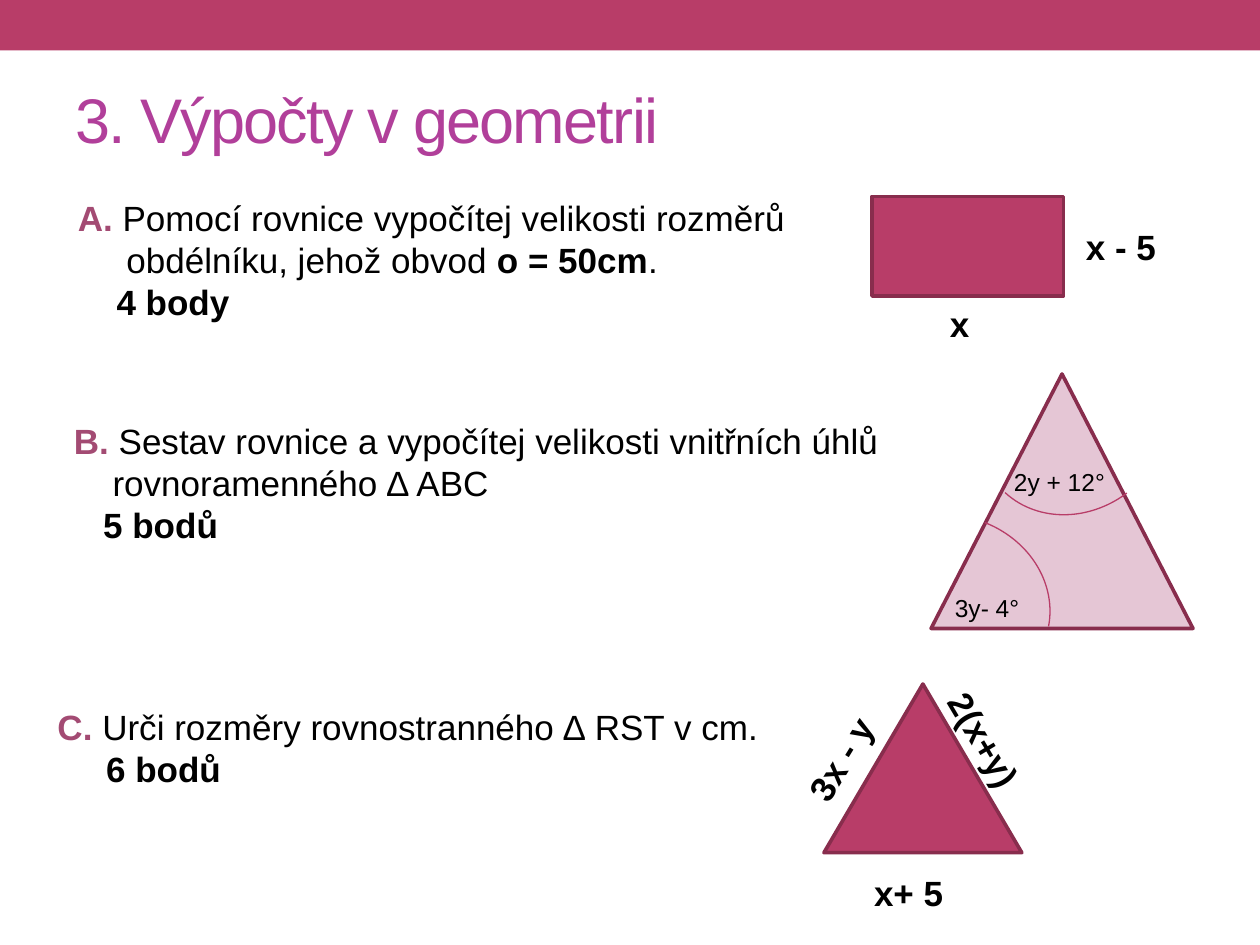
from pptx import Presentation
from pptx.dml.color import RGBColor
from pptx.enum.shapes import MSO_SHAPE
from pptx.enum.text import MSO_ANCHOR, MSO_AUTO_SIZE
from pptx.util import Cm, Pt

RECTANGLE = MSO_SHAPE.RECTANGLE
TRIANGLE = MSO_SHAPE.ISOSCELES_TRIANGLE
ARC = MSO_SHAPE.ARC
MIDDLE = MSO_ANCHOR.MIDDLE
GROW = MSO_AUTO_SIZE.SHAPE_TO_FIT_TEXT

CRIMSON = RGBColor(0xB8, 0x3D, 0x68)
DARK_CRIMSON = RGBColor(0x88, 0x2D, 0x4D)
PALE_PINK = RGBColor(0xE5, 0xC6, 0xD5)
PURPLE = RGBColor(0xB1, 0x3F, 0x9A)
PLUM = RGBColor(0xA3, 0x4B, 0x73)
BLACK = RGBColor(0, 0, 0)


class Worksheet:
    font = "Arial"
    outline_width = Pt(2.08)
    arc_width = Pt(0.75)
    arc_angles = (163.41, 212.01)

    def __init__(self, page):
        self.page = page
        self.target = page.shapes

    def start_group(self):
        self.target = self.page.shapes.add_group_shape().shapes

    def style(self, span, size, color=BLACK, bold=False):
        span.font.name = self.font
        span.font.size = Pt(size)
        span.font.bold = bold
        span.font.color.rgb = color

    def text_box(self, left, top, width, height):
        box = self.target.add_textbox(Cm(left), Cm(top), Cm(width), Cm(height))
        box.text_frame.word_wrap = True
        return box

    def title(self, text, *place):
        frame = self.text_box(*place).text_frame
        frame.vertical_anchor = MIDDLE
        frame.text = text
        span = frame.paragraphs[0].runs[0]
        self.style(span, 36, PURPLE)
        span.font._element.set("spc", "-100")

    def task(self, lines, *place):
        """Each line is an indent in cm followed by (text, colour, bold) spans."""
        frame = self.text_box(*place).text_frame
        frame.auto_size = GROW
        for number, (indent, *spans) in enumerate(lines):
            para = frame.add_paragraph() if number else frame.paragraphs[0]
            para._p.get_or_add_pPr().set("marL", str(Cm(indent)))
            for text, color, bold in spans:
                span = para.add_run()
                span.text = text
                self.style(span, 20, color, bold)

    def label(self, text, left, top, width, height=1.12, size=20, bold=True, angle=0):
        box = self.text_box(left, top, width, height)
        box.rotation = angle
        box.text_frame.auto_size = GROW
        box.text_frame.text = text
        self.style(box.text_frame.paragraphs[0].runs[0], size, bold=bold)

    def figure(self, kind, left, top, width, height, fill=CRIMSON, outlined=True):
        shape = self.target.add_shape(kind, Cm(left), Cm(top), Cm(width), Cm(height))
        shape.shadow.inherit = False
        shape.fill.solid()
        shape.fill.fore_color.rgb = fill
        if outlined:
            shape.line.color.rgb = DARK_CRIMSON
            shape.line.width = self.outline_width
        else:
            shape.line.fill.background()

    def angle_arc(self, left, top, angle):
        arc = self.target.add_shape(ARC, Cm(left), Cm(top), Cm(3.99), Cm(3.56))
        arc.shadow.inherit = False
        arc.adjustments[0], arc.adjustments[1] = self.arc_angles
        arc.rotation = angle
        arc.fill.background()
        arc.line.color.rgb = CRIMSON
        arc.line.width = self.arc_width


def main():
    deck = Presentation()
    deck.slide_width, deck.slide_height = Cm(25.4), Cm(19.05)
    sheet = Worksheet(deck.slides.add_slide(deck.slide_layouts[6]))

    # Header
    sheet.figure(RECTANGLE, 0, 0, 25.4, 1.02, outlined=False)
    sheet.title("3. Výpočty v geometrii", 1.27, 1.47, 22.86, 1.85)

    # Tasks
    sheet.task([
        (0, ("A. ", PLUM, True),
         ("Pomocí rovnice vypočítej velikosti rozměrů", BLACK, False)),
        (0.98, ("obdélníku, jehož obvod ", BLACK, False),
         ("o = 50cm", BLACK, True), (".", BLACK, False)),
        (0.78, ("4 body", BLACK, True)),
    ], 1.32, 3.84, 17.96, 2.82)
    sheet.task([
        (0, ("B. ", PLUM, True),
         ("Sestav rovnice a vypočítej velikosti vnitřních úhlů", BLACK, False)),
        (0.78, ("rovnoramenného ∆ ABC", BLACK, False)),
        (0.59, ("5 bodů", BLACK, True)),
    ], 1.24, 8.33, 21.97, 2.82)
    sheet.task([
        (0, ("C. ", PLUM, True),
         ("Urči rozměry rovnostranného ∆ RST v cm.", BLACK, False)),
        (0.98, ("6 bodů", BLACK, True)),
    ], 0.91, 14.1, 22.61, 1.96)

    # Equilateral triangle RST
    sheet.start_group()
    sheet.figure(TRIANGLE, 16.61, 13.79, 3.99, 3.4)
    sheet.label("x+ 5", 17.37, 17.45, 2.49)
    sheet.label("3x - y", 15.75, 14.66, 2.49, angle=301.5)
    sheet.label("2(x+y)", 18.29, 14.81, 3.63, angle=59.2)

    # Rectangle
    sheet.start_group()
    sheet.figure(RECTANGLE, 17.58, 3.96, 3.86, 2.01)
    sheet.label("x - 5", 21.64, 4.42, 2.49)
    sheet.label("x", 18.9, 5.97, 1.37)

    # Isosceles triangle ABC with its angles
    sheet.start_group()
    sheet.figure(TRIANGLE, 18.77, 7.54, 5.28, 5.13, fill=PALE_PINK)
    sheet.label("3y- 4°", 19, 11.84, 2.41, 0.86, size=14, bold=False)
    sheet.label("2y + 12°", 20.19, 9.3, 2.62, 0.86, size=14, bold=False)
    sheet.angle_arc(19.66, 6.73, 141.1)
    sheet.angle_arc(17.2, 10.41, 19.4)

    deck.save("out.pptx")


if __name__ == "__main__":
    main()
